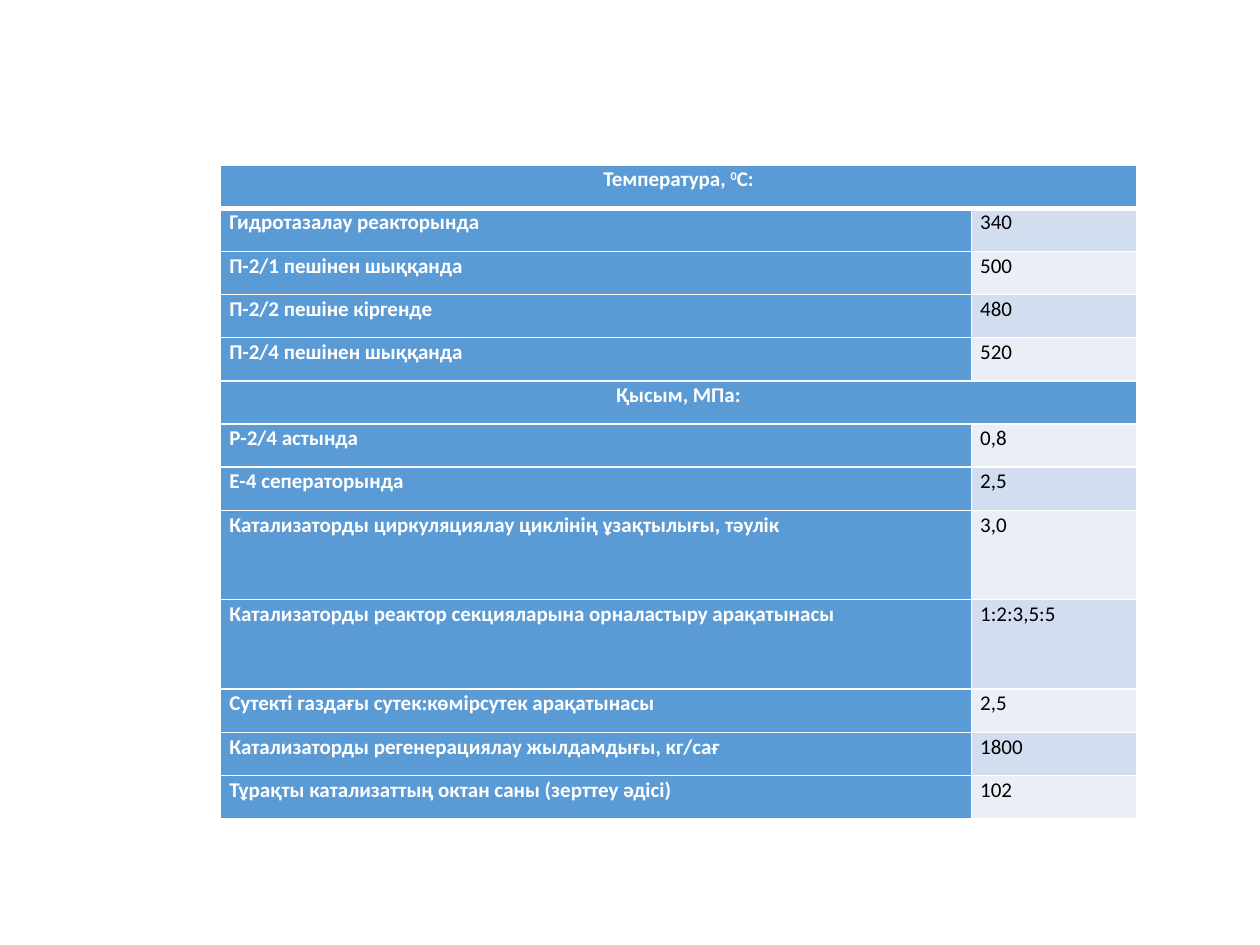
from lxml import etree
from pptx import Presentation
from pptx import util as u
from pptx.dml import color
from pptx.enum import text
from pptx.oxml import ns

COLORS = {"header": "5B9BD5", "odd": "D2DEEF", "even": "EAEFF7",
          "white": "FFFFFF", "black": "000000"}

# One value per row; None marks a heading across both columns
ROWS = [
    ("Температура, ^0^С:", None),
    ("Гидротазалау реакторында", "340"),
    ("П-2/1 пешінен шыққанда", "500"),
    ("П-2/2 пешіне кіргенде", "480"),
    ("П-2/4 пешінен шыққанда", "520"),
    ("Қысым, МПа:", None),
    ("Р-2/4 астында", "0,8"),
    ("Е-4 сеператорында", "2,5"),
    ("Катализаторды циркуляциялау циклінің ұзақтылығы, тәулік", "3,0"),
    ("Катализаторды реактор секцияларына орналастыру арақатынасы", "1:2:3,5:5"),
    ("Сутекті газдағы сутек:көмірсутек арақатынасы", "2,5"),
    ("Катализаторды регенерациялау жылдамдығы, кг/сағ", "1800"),
    ("Тұрақты катализаттың октан саны (зерттеу әдісі)", "102"),
]
TALL_ROWS = (8, 9)
WIDTHS = (5.96, 1.31)
HEIGHT, TALL = 5.19, 0.71
SHORT = (HEIGHT - TALL * len(TALL_ROWS)) / (len(ROWS) - len(TALL_ROWS))


def write(cell, content, ink="white", bold=True, align=text.PP_ALIGN.JUSTIFY):
    """Fill a cell with text; the part between carets is raised."""
    paragraph = cell.text_frame.paragraphs[0]
    paragraph.alignment = align
    paragraph.line_spacing = 1.07
    for part_no, part in enumerate(content.split("^")):
        run = paragraph.add_run()
        run.text = part
        run.font.name = "Calibri"
        run.font.size = u.Pt(12)
        run.font.bold = bold
        run.font.color.rgb = color.RGBColor.from_string(COLORS[ink])
        if part_no % 2:
            run.font._element.set("baseline", "30000")


def add_borders(cell, **widths):
    """Draw white borders; widths are points by side (L, R, T, B)."""
    properties = cell._tc.get_or_add_tcPr()
    for side, points in widths.items():
        line = etree.SubElement(properties, ns.qn(f"a:ln{side}"), w=str(u.Pt(points)))
        fill = etree.SubElement(line, ns.qn("a:solidFill"))
        etree.SubElement(fill, ns.qn("a:srgbClr"), val=COLORS["white"])


prs = Presentation()
prs.slide_width, prs.slide_height = u.Inches(10), u.Inches(7.5)
slide = prs.slides.add_slide(prs.slide_layouts[6])

# Table grid
regime = slide.shapes.add_table(
    len(ROWS), 2, u.Inches(1.75), u.Inches(1.31),
    u.Inches(sum(WIDTHS)), u.Inches(HEIGHT)).table
regime.first_row = regime.horz_banding = False
for column, width in zip(regime.columns, WIDTHS):
    column.width = u.Inches(width)

# Rows: headings, parameter names and values
for row_no, (label, value) in enumerate(ROWS):
    regime.rows[row_no].height = u.Inches(TALL if row_no in TALL_ROWS else SHORT)
    label_cell, value_cell = regime.cell(row_no, 0), regime.cell(row_no, 1)
    band = "odd" if row_no % 2 else "even"
    for cell, shade in ((label_cell, "header"),
                        (value_cell, band if value else "header")):
        cell.margin_left = cell.margin_right = u.Inches(0.07)
        cell.margin_top = cell.margin_bottom = 0
        add_borders(cell, L=1, R=1, T=3 if row_no == 1 else 1,
                    B=3 if row_no == 0 else 1)
        cell.fill.solid()
        cell.fill.fore_color.rgb = color.RGBColor.from_string(COLORS[shade])
    if value:
        write(label_cell, label)
        write(value_cell, value, ink="black", bold=False)
    else:
        label_cell.merge(value_cell)
        write(label_cell, label, align=text.PP_ALIGN.CENTER)

prs.save("out.pptx")
